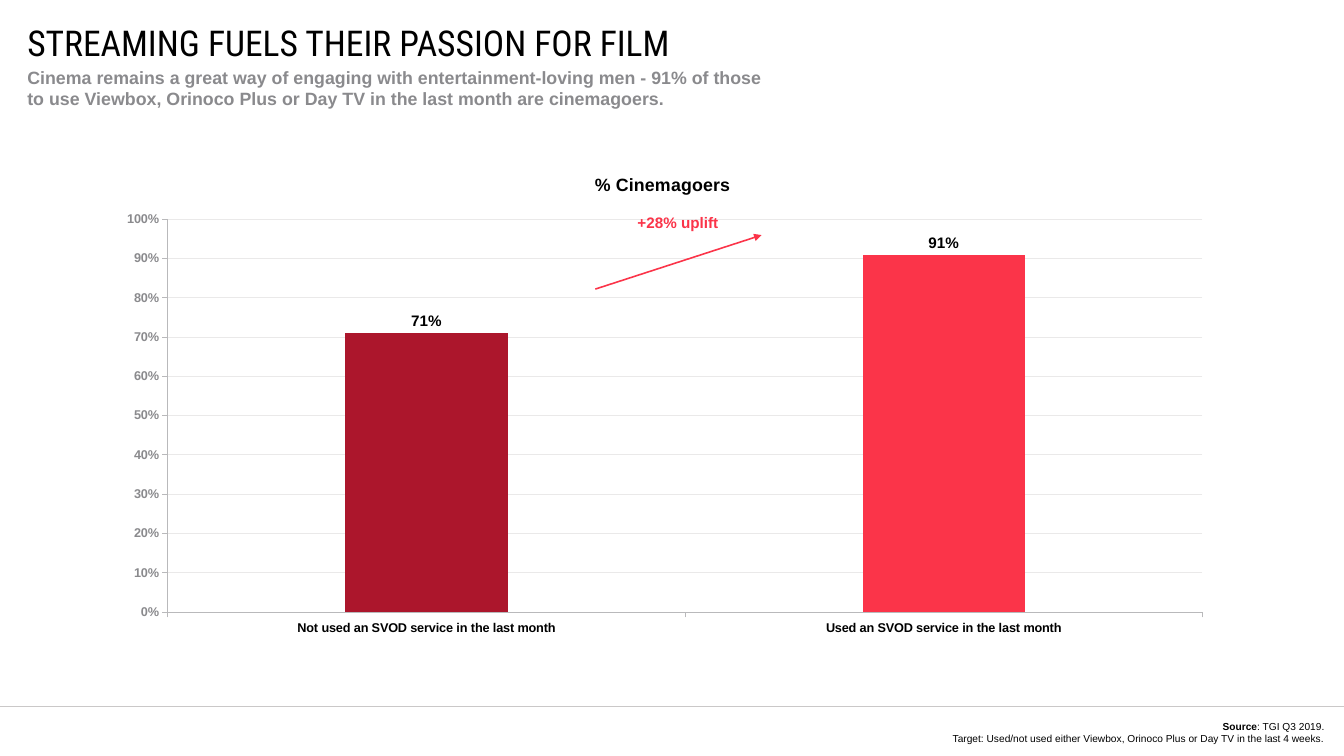
from lxml.etree import SubElement
from pptx import Presentation
from pptx.chart.data import CategoryChartData
from pptx.dml.color import RGBColor
from pptx.enum.chart import XL_CHART_TYPE as ChartType, XL_LABEL_POSITION as LabelPosition
from pptx.enum.chart import XL_TICK_MARK as TickMark
from pptx.enum.shapes import MSO_CONNECTOR as Connector
from pptx.enum.text import MSO_ANCHOR as Anchor, PP_ALIGN as Align
from pptx.oxml import parse_xml
from pptx.oxml.ns import nsdecls, qn
from pptx.util import Cm, Pt

BLACK = RGBColor(0x00, 0x00, 0x00)
GREY = RGBColor(0x8A, 0x8A, 0x8D)
RULE_GREY = RGBColor(0xCA, 0xC8, 0xC8)
AXIS_GREY = RGBColor(0xB9, 0xB9, 0xBB)
GRID_GREY = RGBColor(0xEA, 0xE9, 0xE9)
DARK_RED = RGBColor(0xAC, 0x16, 0x2C)
RED = RGBColor(0xFB, 0x34, 0x49)


def style(font, size, color, bold=True, name="Arial"):
    font.name = name
    font.size = Pt(size)
    font.bold = bold
    font.color.rgb = color


def add_line(start, end, color, width):
    """Add a straight line without a shadow between two (x, y) points in cm."""
    line = slide.shapes.add_connector(
        Connector.STRAIGHT, *(Cm(value) for value in start + end))
    line.line.color.rgb = color
    line.line.width = Pt(width)
    SubElement(line.element.spPr, qn("a:effectLst"))
    return line


prs = Presentation()
prs.slide_width = Cm(37.34)
prs.slide_height = Cm(21)
slide = prs.slides.add_slide(prs.slide_layouts[5])

add_line((0, 19.63), (37.34, 19.63), RULE_GREY, 0.5)

# Heading, subheading, source and uplift label
title = slide.shapes.title
title.left, title.top, title.width, title.height = Cm(0.76), Cm(0.76), Cm(34.49), Cm(0.81)
subheading = slide.shapes.add_textbox(Cm(0.76), Cm(1.85), Cm(20.78), Cm(1.22))
source = slide.shapes.add_textbox(Cm(22.12), Cm(19.99), Cm(14.68), Cm(0.69))
for box, anchor in ((title, Anchor.MIDDLE), (subheading, Anchor.TOP), (source, Anchor.MIDDLE)):
    frame = box.text_frame
    frame.word_wrap = True
    frame.vertical_anchor = anchor
    frame.margin_left = frame.margin_top = frame.margin_right = frame.margin_bottom = 0

title.text_frame.text = "STREAMING FUELS THEIR PASSION FOR FILM"
heading = title.text_frame.paragraphs[0]
heading.alignment = Align.LEFT
style(heading.runs[0].font, 28, BLACK, False, "Roboto Condensed")

subheading.text_frame.text = (
    "Cinema remains a great way of engaging with entertainment-loving men - 91% of those "
    "to use Viewbox, Orinoco Plus or Day TV in the last month are cinemagoers.")
style(subheading.text_frame.paragraphs[0].runs[0].font, 14, GREY)

citation = source.text_frame.paragraphs[0]
target = source.text_frame.add_paragraph()
for paragraph, text, bold in (
        (citation, "Source", True),
        (citation, ": TGI Q3 2019.", False),
        (target, "Target: Used/not used either Viewbox, Orinoco Plus or Day TV "
                 "in the last 4 weeks.", False)):
    paragraph.alignment = Align.RIGHT
    run = paragraph.add_run()
    run.text = text
    style(run.font, 8, BLACK, bold)

# Cinemagoer chart
data = CategoryChartData(number_format="0%")
data.categories = ["Not used an SVOD service in the last month",
                   "Used an SVOD service in the last month"]
data.add_series("Series 1", (0.71, 0.91))
chart = slide.shapes.add_chart(ChartType.COLUMN_CLUSTERED, Cm(2.79), Cm(4.32),
                               Cm(31.24), Cm(13.64), data).chart
style(chart.font, 10, BLACK, False)
chart.has_legend = False
chart.has_title = True
chart.chart_title.include_in_layout = False
chart.chart_title.text_frame.text = "% Cinemagoers"
style(chart.chart_title.text_frame.paragraphs[0].runs[0].font, 14, BLACK)

for axis, color in ((chart.category_axis, BLACK), (chart.value_axis, GREY)):
    style(axis.tick_labels.font, 10, color)
    axis.major_tick_mark = TickMark.OUTSIDE
    axis.minor_tick_mark = TickMark.NONE
    axis.format.line.color.rgb = AXIS_GREY
    axis.format.line.width = Pt(0.75)
scale = chart.value_axis
scale.minimum_scale, scale.maximum_scale, scale.major_unit = 0, 1, 0.1
scale.tick_labels.number_format = "0%"
scale.tick_labels.number_format_is_linked = False
scale.major_gridlines.format.line.color.rgb = GRID_GREY
scale.major_gridlines.format.line.width = Pt(0.75)

plot = chart.plots[0]
plot.vary_by_categories = False
plot.gap_width = 219
plot.overlap = -27
cinemagoers = plot.series[0]
for index, color in enumerate((DARK_RED, RED)):
    fill = cinemagoers.points[index].format.fill
    fill.solid()
    fill.fore_color.rgb = color
labels = cinemagoers.data_labels
labels.show_value = True
labels.position = LabelPosition.OUTSIDE_END
labels.number_format = "0%"
labels.number_format_is_linked = False
style(labels.font, 12, BLACK)

# Fixed position of the plot inside the chart
plot_area = chart.element.chart.plotArea
for layout in plot_area.findall(qn("c:layout")):
    plot_area.remove(layout)
plot_area.insert(0, parse_xml(
    f'<c:layout {nsdecls("c")}><c:manualLayout><c:layoutTarget val="inner"/>'
    '<c:xMode val="edge"/><c:yMode val="edge"/><c:x val="0.06"/><c:y val="0.13"/>'
    '<c:w val="0.92"/><c:h val="0.8"/></c:manualLayout></c:layout>'))

# Uplift between the columns
arrow = add_line((16.54, 8.03), (21.16, 6.53), RED, 1.25)
SubElement(arrow.get_or_add_ln(), qn("a:tailEnd"), type="triangle")
uplift = slide.shapes.add_textbox(Cm(17.17), Cm(5.79), Cm(3.33), Cm(0.76))
uplift.text_frame.word_wrap = True
uplift.text_frame.text = "+28% uplift"
uplift_text = uplift.text_frame.paragraphs[0]
uplift_text.alignment = Align.CENTER
style(uplift_text.runs[0].font, 12, RED)

prs.save("out.pptx")
